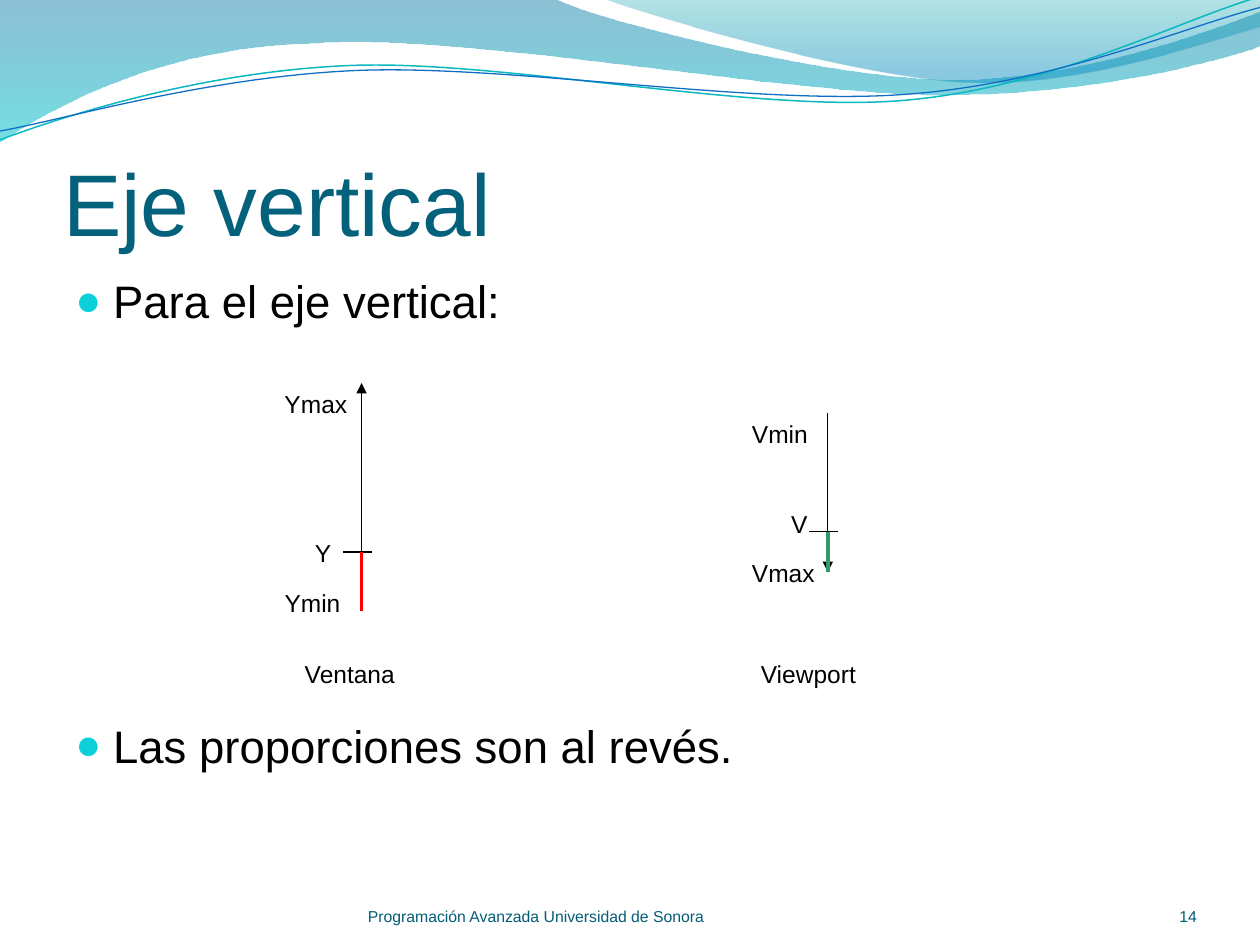
from math import cos, radians, sin

from lxml import etree
from pptx import Presentation
from pptx.dml.color import RGBColor
from pptx.enum.shapes import MSO_CONNECTOR
from pptx.enum.text import MSO_ANCHOR, MSO_AUTO_SIZE, PP_ALIGN
from pptx.oxml.ns import qn
from pptx.util import Inches, Pt

LINE = MSO_CONNECTOR.STRAIGHT
BOTTOM, TOP = MSO_ANCHOR.BOTTOM, MSO_ANCHOR.TOP
LEFT, RIGHT = PP_ALIGN.LEFT, PP_ALIGN.RIGHT
NO_FIT, GROW = MSO_AUTO_SIZE.NONE, MSO_AUTO_SIZE.SHAPE_TO_FIT_TEXT

FONT = "Arial"
TILT = 2.7
BLACK = RGBColor(0, 0, 0)
RED = RGBColor(0xFF, 0, 0)
GREEN = RGBColor(0x33, 0x99, 0x66)
TITLE = RGBColor(0x04, 0x61, 0x7B)
FOOT = RGBColor(0x04, 0x5D, 0x75)
BULLET = RGBColor(0x0B, 0xD0, 0xD9)
TEAL = RGBColor(0x0A, 0xB8, 0xBF)
BLUE = RGBColor(0x0F, 0x6F, 0xC6)
DEEP = RGBColor(0, 0x74, 0xA1)
AQUA = RGBColor(0, 0xC6, 0xCF)
SEA = RGBColor(0, 0xA1, 0xA9)
SKY = RGBColor(0, 0x8B, 0xBF)


def pairs(part):
    return list(zip(part[::2], part[1::2]))


def turn(part, mid):
    """Turn every point of a path part clockwise by TILT about mid."""
    c, s = cos(radians(TILT)), sin(radians(TILT))
    out = []
    for x, y in pairs(part):
        dx, dy = x - mid[0], y - mid[1]
        out += [mid[0] + dx * c - dy * s, mid[1] + dx * s + dy * c]
    return out


class Deck:
    def __init__(self):
        self.prs = Presentation()
        self.prs.slide_width, self.prs.slide_height = Inches(10), Inches(7.5)
        self.slide = self.prs.slides.add_slide(self.prs.slide_layouts[5])

    def curve(self, path, closed):
        """Draw a path in which a pair is a corner and a six-tuple a Bezier curve."""
        pts = [(Inches(x), Inches(y)) for part in path for x, y in pairs(part)]
        pen = self.slide.shapes.build_freeform(*pts[0])
        pen.add_line_segments(pts[1:], close=closed)
        shape = pen.convert_to_shape()
        shape.shadow.inherit = False
        legs = shape._element.spPr.iter(qn("a:lnTo"))
        legs = iter(list(legs))
        for part in path[1:]:
            group = [next(legs) for _ in pairs(part)]
            if len(group) == 3:
                bend = etree.Element(qn("a:cubicBezTo"))
                group[0].addprevious(bend)
                for leg in group:
                    bend.append(leg[0])
                    leg.getparent().remove(leg)
        return shape

    def wave(self, path, stops):
        """Draw a filled band; each stop is place, colour and opacity in percent."""
        shape = self.curve(path, True)
        shape.line.fill.background()
        shape.fill.gradient()
        shape.fill.gradient_angle = 270
        for stop, (place, color, _) in zip(shape.fill.gradient_stops, stops):
            stop.position, stop.color.rgb = place, color
        tints = shape._element.spPr.iter(qn("a:srgbClr"))
        for tint, (_, _, alpha) in zip(tints, stops):
            etree.SubElement(tint, qn("a:alpha"), val=str(alpha * 1000))

    def thread(self, path, mid, color, width):
        shape = self.curve([turn(part, mid) for part in path], False)
        shape.rotation = 360 - TILT
        shape.fill.background()
        shape.line.color.rgb, shape.line.width = color, Pt(width)

    def line(self, start, end, color=BLACK, width=0.75, arrow=False):
        ends = [Inches(n) for n in (*start, *end)]
        link = self.slide.shapes.add_connector(LINE, *ends)
        link.line.color.rgb, link.line.width = color, Pt(width)
        if arrow:
            etree.SubElement(link.line._get_or_add_ln(), qn("a:tailEnd"), type="triangle")
        etree.SubElement(link._element.spPr, qn("a:effectLst"))

    def run(self, para, text, size, color):
        run = para.add_run()
        run.text = text
        run.font.name, run.font.size = FONT, Pt(size)
        run.font.color.rgb = color

    def title(self, text, box):
        shape = self.slide.shapes.title
        shape.left, shape.top, shape.width, shape.height = map(Inches, box)
        self.frame(shape.text_frame, BOTTOM, (0, 0.05, 0, 0))
        para = shape.text_frame.paragraphs[0]
        para.alignment = LEFT
        self.run(para, text, 50, TITLE)

    def frame(self, frame, anchor, pads):
        frame.word_wrap, frame.auto_size = True, NO_FIT
        frame.vertical_anchor = anchor
        (frame.margin_left, frame.margin_top,
         frame.margin_right, frame.margin_bottom) = map(Inches, pads)

    def box(self, box):
        return self.slide.shapes.add_textbox(*map(Inches, box)).text_frame

    def label(self, text, left, top, width):
        frame = self.box((left, top, width, 0.33))
        frame.word_wrap, frame.auto_size = False, GROW
        self.run(frame.paragraphs[0], text, 14, BLACK)

    def foot(self, text, left, width, align):
        frame = self.box((left, 6.95, width, 0.4))
        self.frame(frame, BOTTOM, (0, 0, 0, 0))
        frame.paragraphs[0].alignment = align
        self.run(frame.paragraphs[0], text, 9, FOOT)

    def list(self, items, box):
        """Add bullets; each item is a text and the space above it in points."""
        frame = self.box(box)
        self.frame(frame, TOP, (0.1, 0.05, 0.1, 0.05))
        for i, (text, gap) in enumerate(items):
            para = frame.add_paragraph() if i else frame.paragraphs[0]
            para.space_before = Pt(gap)
            props = para._p.get_or_add_pPr()
            props.set("marL", str(Inches(0.3)))
            props.set("indent", str(Inches(-0.3)))
            tint = etree.SubElement(props, qn("a:buClr"))
            etree.SubElement(tint, qn("a:srgbClr"), val=str(BULLET))
            etree.SubElement(props, qn("a:buSzPct"), val="95000")
            etree.SubElement(props, qn("a:buFont"), typeface=FONT)
            etree.SubElement(props, qn("a:buChar"), char="●")
            self.run(para, text, 26, BLACK)


def main():
    deck = Deck()
    deck.wave([(0, 0), (4.4, -0.01), (4.76, 0.17, 6.64, 0.63, 7.58, 0.63),
               (8.53, 0.63, 9.58, 0.26, 10, 0.09), (10.01, 0.36),
               (9.83, 0.44, 8.7, 0.76, 7.46, 0.75),
               (6.22, 0.75, 3.82, 0.28, 2.57, 0.34),
               (1.29, 0.36, 0.46, 0.83, -0.01, 1.13)],
              [(0, DEEP, 45), (1, AQUA, 55)])
    deck.wave([(4.79, -0.01), (5.09, 0.11, 6.82, 0.62, 7.69, 0.65),
               (8.56, 0.69, 9.61, 0.32, 10, 0.21), (10, 0)],
              [(0, SEA, 30), (0.8, SKY, 45)])
    deck.thread([(0, 1.11), (0.48, 0.93, 1.58, 0.57, 2.77, 0.52),
                 (3.95, 0.47, 5.93, 0.89, 7.13, 0.8),
                 (8.33, 0.71, 9.38, 0.15, 9.98, -0.02)], (4.99, 0.57), TEAL, 0.85)
    deck.thread([(0, 1.04), (0.47, 0.96, 1.64, 0.61, 2.83, 0.56),
                 (4.03, 0.51, 5.97, 0.84, 7.17, 0.75),
                 (8.36, 0.67, 9.41, 0.21, 10, 0.06)], (5, 0.59), BLUE, 0.75)

    deck.title("Eje vertical", (0.5, 0.77, 9, 1.25))
    deck.list([("Para el eje vertical:", 5.2),
               ("Las proporciones son al revés.", 222.8)], (0.5, 2.12, 9, 4.8))
    deck.foot("Programación Avanzada Universidad de Sonora", 2.92, 3.67, LEFT)
    deck.foot("14", 8.67, 0.83, RIGHT)

    # Each axis: x, start, end, tick height, end of the marked part, its colour
    axes = [(2.87, 4.85, 3.04, 4.38, 4.85, RED),
            (6.57, 3.28, 4.54, 4.22, 4.54, GREEN)]
    for x, start, end, tick, mark, color in axes:
        deck.line((x, start), (x, end), arrow=True)
        deck.line((x + 0.08, tick), (x - 0.15, tick))
        deck.line((x, tick), (x, mark), color, 2)

    for item in [("Ventana", 2.32, 5.18, 1.01), ("Viewport", 5.94, 5.18, 1.06),
                 ("Ymin", 2.16, 4.62, 0.69), ("Y", 2.4, 4.22, 0.32),
                 ("Ymax", 2.16, 3.04, 0.74), ("V", 6.18, 3.99, 0.34),
                 ("Vmin", 5.87, 3.28, 0.7), ("Vmax", 5.87, 4.38, 0.76)]:
        deck.label(*item)
    deck.prs.save("out.pptx")


if __name__ == "__main__":
    main()
